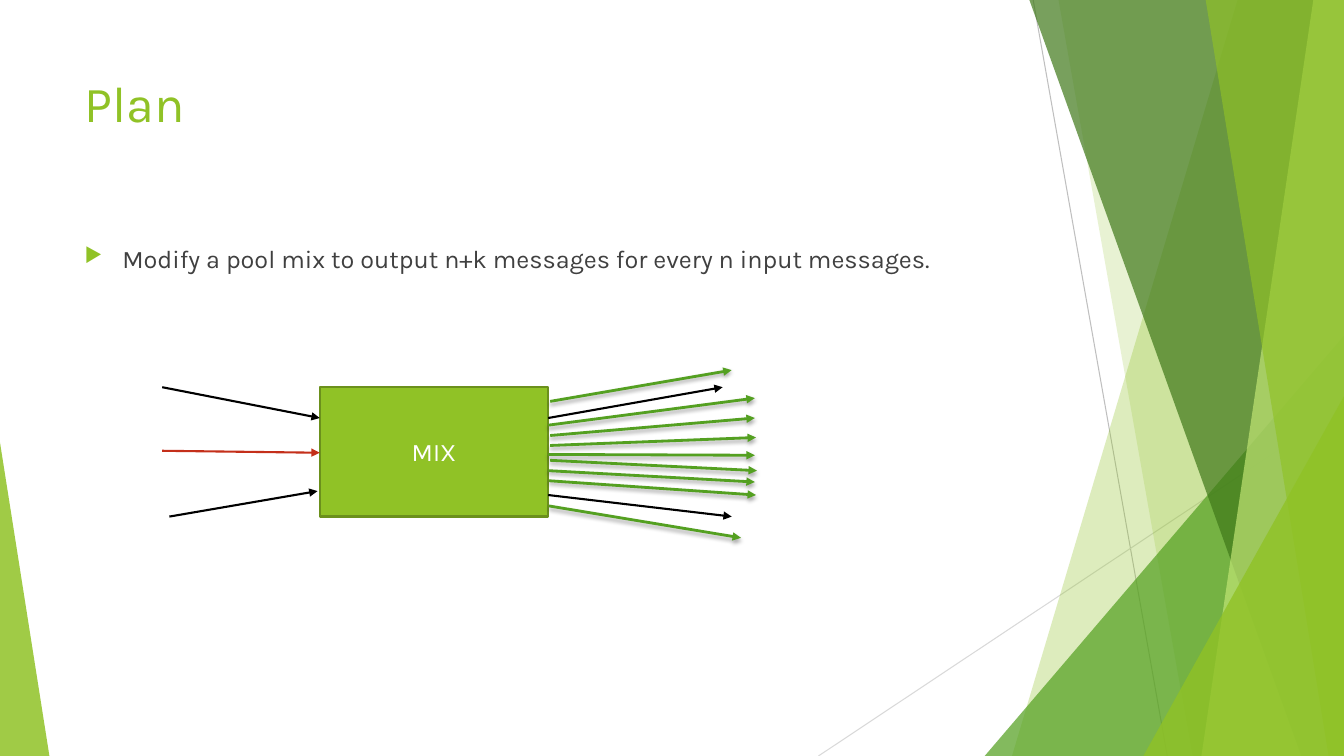
from lxml.etree import SubElement
from pptx import Presentation
from pptx.dml.color import RGBColor
from pptx.enum.shapes import MSO_CONNECTOR, MSO_SHAPE
from pptx.enum.text import MSO_ANCHOR, MSO_AUTO_SIZE, PP_ALIGN
from pptx.oxml.ns import qn
from pptx.util import Pt

# Content
TITLE = "Plan"
BULLET = "Modify a pool mix to output n+k messages for every n input messages."
BOX_LABEL = "MIX"
FONT = "Karla"
LIME, GREEN, BLACK, RED = "90C226", "54A021", "000000", "C42F1A"
WIDTH, HEIGHT, BLEED = 960, 540, -0.6

# Decoration, all lengths in points
HAIRLINES = [  # start, end, colour
    ((738, 0), (833.8, 540), "BFBFBF"),
    ((960, 290.2), (584.6, 540), "D9D9D9"),
]
# band: top-left x, bottom-left x, colour, opacity (runs to the right edge)
# triangle: left, top, width, apex position, colour, opacity (runs to the bottom)
FACETS = [
    ("band", 884.2, 722.9, LIME, 30),
    ("band", 756, 851.8, LIME, 20),
    ("triangle", 703.4, 239.8, 256.6, 1, GREEN, 72),
    ("band", 735.1, 929.5, "3F7819", 70),
    ("band", 938.2, 858.2, "C0E474", 70),
    ("band", 861.1, 949, LIME, 65),
    ("triangle", 816.7, 283, 143.3, 1, LIME, 80),
    ("triangle", 0, 316.1, 35.3, 0, LIME, 85),
]

# Diagram arrows: x1, y1, x2, y2
MIX_BOX = (228.4, 276.6, 163.2, 92.4)
PLAIN_ARROWS = [
    (115.9, 276.6, 228.4, 298.6, BLACK),
    (115.9, 322, 228.4, 323.4, RED),
    (121, 369, 226.8, 350.8, BLACK),
    (391.6, 298.6, 516.2, 276.6, BLACK),
    (391.6, 353.6, 522.7, 369, BLACK),
]
ADDED_ARROWS = [
    (391.8, 324.6, 539.2, 325.2),
    (393, 311.1, 539.2, 298.6),
    (391.8, 336.2, 539.2, 344.3),
    (393, 286.7, 522.6, 264.4),
    (392.2, 361.4, 529.3, 384.2),
    (391.8, 303.7, 539.2, 284.4),
    (393, 318.2, 540, 312.5),
    (392.2, 343.4, 540, 353.6),
    (393, 328.8, 540.7, 336.2),
]


def rgb(value):
    return RGBColor.from_string(value)


def add_line(x1, y1, x2, y2, color, width, arrow=False, shadow=False):
    line = slide.shapes.add_connector(
        MSO_CONNECTOR.STRAIGHT, Pt(x1), Pt(y1), Pt(x2), Pt(y2))
    line.line.color.rgb = rgb(color)
    line.line.width = Pt(width)
    sp_pr = line._element.spPr
    if arrow:
        SubElement(sp_pr.find(qn("a:ln")), qn("a:tailEnd"), type="triangle")
    effects = SubElement(sp_pr, qn("a:effectLst"))
    if shadow:
        outer = SubElement(effects, qn("a:outerShdw"), blurRad=str(Pt(3)),
                           dist=str(Pt(2)), dir="5400000", rotWithShape="0")
        shade = SubElement(outer, qn("a:srgbClr"), val=BLACK)
        SubElement(shade, qn("a:alpha"), val="35000")


def fill_facet(sp, color, opacity):
    sp.shadow.inherit = False
    sp.fill.solid()
    sp.fill.fore_color.rgb = rgb(color)
    sp.line.fill.background()
    clr = sp._element.spPr.find(qn("a:solidFill")).find(qn("a:srgbClr"))
    SubElement(clr, qn("a:alpha"), val=str(opacity * 1000))


def add_band(top_x, bottom_x, color, opacity):
    builder = slide.shapes.build_freeform(Pt(top_x), Pt(BLEED))
    corners = [(WIDTH, BLEED), (WIDTH, HEIGHT), (bottom_x, HEIGHT)]
    builder.add_line_segments([(Pt(x), Pt(y)) for x, y in corners], close=True)
    fill_facet(builder.convert_to_shape(), color, opacity)


def add_triangle(left, top, width, apex, color, opacity):
    sp = slide.shapes.add_shape(MSO_SHAPE.ISOSCELES_TRIANGLE, Pt(left), Pt(top),
                                Pt(width), Pt(HEIGHT - top))
    sp.adjustments[0] = apex
    fill_facet(sp, color, opacity)


def write(sp, text, size, color, align, anchor):
    tf = sp.text_frame
    tf.text = text
    tf.word_wrap = True
    tf.auto_size = MSO_AUTO_SIZE.NONE
    tf.vertical_anchor = anchor
    p = tf.paragraphs[0]
    p.alignment = align
    font = p.runs[0].font
    font.name, font.size, font.color.rgb = FONT, Pt(size), rgb(color)
    return p


prs = Presentation()
prs.slide_width, prs.slide_height = Pt(WIDTH), Pt(HEIGHT)
slide = prs.slides.add_slide(prs.slide_layouts[5])

# Background facets
for start, end, color in HAIRLINES:
    add_line(*start, *end, color, 0.75)
draw = {"band": add_band, "triangle": add_triangle}
for kind, *spec_values in FACETS:
    draw[kind](*spec_values)

# Title
title = slide.shapes.title
title.left, title.top, title.width, title.height = Pt(53.3), Pt(48), Pt(677), Pt(104)
write(title, TITLE, 36, LIME, PP_ALIGN.LEFT, MSO_ANCHOR.TOP)

# Bullet
body = slide.shapes.add_textbox(Pt(53.3), Pt(170), Pt(677), Pt(305.5))
p = write(body, BULLET, 18, "404040", PP_ALIGN.LEFT, MSO_ANCHOR.TOP)
p.space_before = Pt(10)
p_pr = p._p.get_or_add_pPr()
p_pr.set("marL", str(Pt(27)))
p_pr.set("indent", str(Pt(-27)))
SubElement(SubElement(p_pr, qn("a:buClr")), qn("a:srgbClr"), val=LIME)
SubElement(p_pr, qn("a:buSzPct"), val="80000")
SubElement(p_pr, qn("a:buChar"), char="▶")

# Mix box
box = slide.shapes.add_shape(MSO_SHAPE.RECTANGLE, *map(Pt, MIX_BOX))
box.shadow.inherit = False
box.fill.solid()
box.fill.fore_color.rgb = rgb(LIME)
box.line.color.rgb = rgb("6B901C")
box.line.width = Pt(1.5)
write(box, BOX_LABEL, 18, "FFFFFF", PP_ALIGN.CENTER, MSO_ANCHOR.MIDDLE)

# Message arrows
for arrow in PLAIN_ARROWS:
    add_line(*arrow, 1.5, arrow=True)
for arrow in ADDED_ARROWS:
    add_line(*arrow, GREEN, 2, arrow=True, shadow=True)

prs.save("out.pptx")
